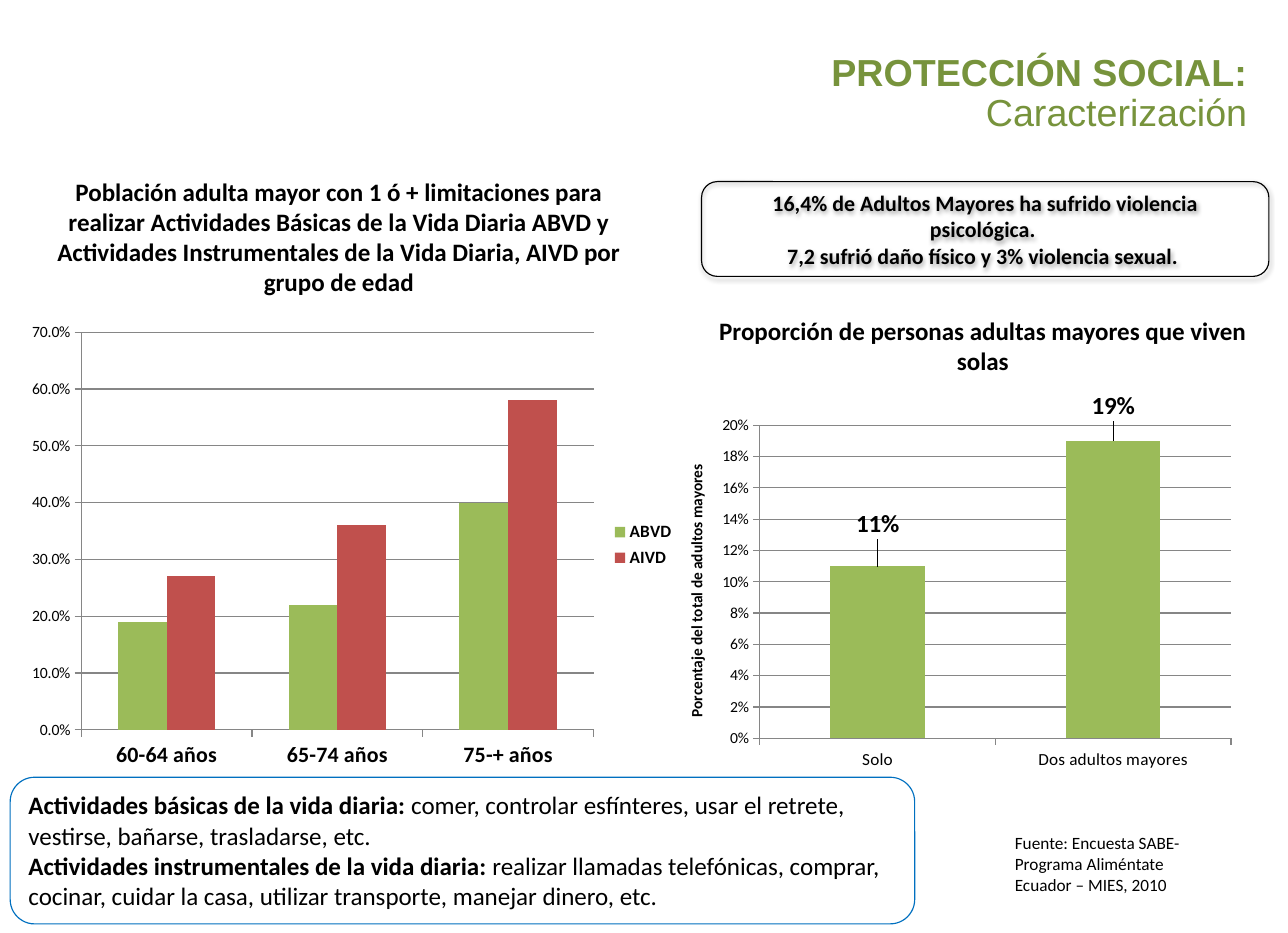
import pptx
import pptx.chart.data
import pptx.dml.color
import pptx.enum.chart
import pptx.enum.shapes
import pptx.enum.text
import pptx.oxml
import pptx.oxml.ns
import pptx.util

WIDE, HIGH = 11.42, 8.27
COLORS = {"ink": "000000", "title": "77933C", "green": "9BBB59",
          "red": "C0504D", "blue": "0070C0", "grid": "868686"}
NS = pptx.oxml.ns.nsdecls("a", "c")

# Places are percent of the slide: left, top, width, height
TITLE = ((26.27, 3.63, 72.24, 12.94),
         [[("PROTECCIÓN SOCIAL: \v", True), ("Caracterización ", False)]])
TEXTS = [
    ((3.06, 20.07, 46.5, 10.52),
     [[("Población adulta mayor con 1 ó + limitaciones para realizar "
        "Actividades Básicas de la Vida Diaria ABVD y Actividades "
        "Instrumentales de la Vida Diaria, AIVD por grupo de edad", True)]],
     dict(size=16, align="CENTER", anchor="MIDDLE")),
    ((77.93, 88.63, 16.37, 7.98),
     [[("Fuente: Encuesta SABE-Programa Aliméntate Ecuador – MIES, 2010",
        False)]],
     dict(size=11)),
    ((53.06, 33.62, 46.5, 6.89),
     [[("Proporción de personas adultas mayores que viven solas", True)]],
     dict(size=16, align="CENTER", anchor="MIDDLE")),
]
VIOLENCE = ((54.47, 19.47, 44.05, 10.16),
            [[("16,4% de Adultos Mayores ha sufrido violencia psicológica. ",
               True)],
             [("7,2 sufrió daño físico y 3% violencia sexual. ", True)]])
TERMS = ((0.79, 83.31, 70.23, 15.72),
         [[("Actividades básicas de la vida diaria: ", True),
           ("comer, controlar esfínteres, usar el retrete, vestirse, "
            "bañarse, trasladarse, etc.", False)],
          [("Actividades instrumentales de la vida diaria: ", True),
           ("realizar llamadas telefónicas, comprar, cocinar, cuidar la "
            "casa, utilizar transporte, manejar dinero, etc.", False)]])
LIMITS = dict(
    place=(1.66, 33.62, 51.66, 49.58), plot=(0.09, 0.04, 0.77, 0.86),
    cats=["60-64 años", "65-74 años", "75-+ años"],
    series=[("ABVD", [0.19, 0.22, 0.4], "green"),
            ("AIVD", [0.27, 0.36, 0.58], "red")],
    top=0.7, step=0.1, form="0.0%", size=14, bold=True)
ALONE = dict(
    place=(51.31, 41.96, 45.18, 41.23), plot=(0.17, 0.07, 0.81, 0.83),
    cats=["Solo", "Dos adultos mayores"],
    series=[("Series 1", [0.11, 0.19], "green")],
    top=0.2, step=0.02, form="0%", size=11, bold=False)
AXIS_NAME = "Porcentaje del total de adultos mayores"
LABEL_SHIFTS = [-0.06, -0.04]  # shares of the chart's height


def rgb(name):
    return pptx.dml.color.RGBColor.from_string(COLORS[name])


def area(place):
    """Turn percent of the slide into lengths."""
    return [pptx.util.Inches(part * side / 100)
            for part, side in zip(place, (WIDE, HIGH) * 2)]


def style(font, size, bold=False, color="ink", face="Calibri"):
    font.size, font.bold, font.name = pptx.util.Pt(size), bold, face
    font.color.rgb = rgb(color)


def write(shape, paras, size=16, align="LEFT", anchor="TOP", color="ink",
          face="Calibri", space=None):
    frame = shape.text_frame
    frame.word_wrap = True
    frame.vertical_anchor = getattr(pptx.enum.text.MSO_ANCHOR, anchor)
    for i, runs in enumerate(paras):
        para = frame.paragraphs[0] if i == 0 else frame.add_paragraph()
        para.alignment = getattr(pptx.enum.text.PP_ALIGN, align)
        if space:
            para.line_spacing = space
        for text, bold in runs:
            head, *rest = text.split("\v")
            run = para.add_run()
            run.text = head
            style(run.font, size, bold, color, face)
            if rest:
                para.add_line_break()


def frame_box(slide, place, line):
    box = slide.shapes.add_shape(
        pptx.enum.shapes.MSO_SHAPE.ROUNDED_RECTANGLE, *area(place))
    box.shadow.inherit = False
    box.fill.background()
    box.line.color.rgb = rgb(line)
    box.line.width = pptx.util.Pt(0.75)
    return box


def cast(box):
    """Give a box a soft shadow straight below it."""
    effects = box._element.spPr.find(pptx.oxml.ns.qn("a:effectLst"))
    blur, dist = pptx.util.Pt(3.1), pptx.util.Pt(1.8)
    effects.append(pptx.oxml.parse_xml(
        f'<a:outerShdw {NS} blurRad="{blur}" dist="{dist}" dir="5400000" '
        f'rotWithShape="0"><a:srgbClr val="{COLORS["ink"]}">'
        '<a:alpha val="35000"/></a:srgbClr></a:outerShdw>'))


def layout(inner):
    return pptx.oxml.parse_xml(
        f"<c:layout {NS}><c:manualLayout>{inner}</c:manualLayout></c:layout>")


def columns(slide, place, plot, cats, series, top, step, form, size, bold):
    data = pptx.chart.data.CategoryChartData(number_format=form)
    data.categories = cats
    for name, vals, _ in series:
        data.add_series(name, vals)
    chart = slide.shapes.add_chart(
        pptx.enum.chart.XL_CHART_TYPE.COLUMN_CLUSTERED, *area(place),
        data).chart
    style(chart.font, 10)
    chart.has_title = chart.has_legend = False
    bars = chart.plots[0]
    bars.gap_width, bars.overlap, bars.vary_by_categories = 150, 0, False
    for ser, (_, _, color) in zip(bars.series, series):
        ser.format.fill.solid()
        ser.format.fill.fore_color.rgb = rgb(color)
    axis = chart.value_axis
    axis.minimum_scale, axis.maximum_scale, axis.major_unit = 0, top, step
    axis.tick_labels.number_format = form
    axis.tick_labels.number_format_is_linked = False
    style(axis.tick_labels.font, 10)
    style(chart.category_axis.tick_labels.font, size, bold)
    axis.has_major_gridlines = True
    for part in (axis, axis.major_gridlines, chart.category_axis):
        part.format.line.color.rgb = rgb("grid")
        part.format.line.width = pptx.util.Pt(0.75)
    for part in (axis, chart.category_axis):
        part.major_tick_mark = pptx.enum.chart.XL_TICK_MARK.OUTSIDE
    zone = chart._chartSpace.chart.plotArea
    for old in zone.findall(pptx.oxml.ns.qn("c:layout")):
        zone.remove(old)
    zone.insert(0, layout(
        '<c:layoutTarget val="inner"/><c:xMode val="edge"/>'
        '<c:yMode val="edge"/>' + "".join(
            f'<c:{key} val="{val}"/>' for key, val in zip("xywh", plot))))
    return chart


def add_legend(chart):
    chart.has_legend = True
    chart.legend.position = pptx.enum.chart.XL_LEGEND_POSITION.RIGHT
    chart.legend.include_in_layout = False
    style(chart.legend.font, 11, True)


def add_labels(chart):
    """Show values over the columns, lifted by the given shifts."""
    ser = chart.plots[0].series[0]
    labels = ser.data_labels
    labels.show_value = True
    labels.number_format, labels.number_format_is_linked = "0%", False
    style(labels.font, 16, True)
    for i, shift in enumerate(LABEL_SHIFTS):
        label = ser.points[i].data_label
        style(label.font, 16, True)
        label.position = pptx.enum.chart.XL_LABEL_POSITION.OUTSIDE_END
        node = labels._element.findall(pptx.oxml.ns.qn("c:dLbl"))[i]
        node.insert(1, layout(f'<c:x val="0"/><c:y val="{shift}"/>'))


def main():
    deck = pptx.Presentation()
    deck.slide_width = pptx.util.Inches(WIDE)
    deck.slide_height = pptx.util.Inches(HIGH)
    slide = deck.slides.add_slide(deck.slide_layouts[5])
    title = slide.shapes.title
    place, paras = TITLE
    title.left, title.top, title.width, title.height = area(place)
    write(title, paras, size=24, align="RIGHT", anchor="MIDDLE",
          color="title", face="Arial", space=0.9)
    for place, paras, form in TEXTS:
        write(slide.shapes.add_textbox(*area(place)), paras, **form)
    add_legend(columns(slide, **LIMITS))
    alone = columns(slide, **ALONE)
    add_labels(alone)
    name = alone.value_axis.axis_title.text_frame
    name.text = AXIS_NAME
    style(name.paragraphs[0].runs[0].font, 10, True)
    box = frame_box(slide, VIOLENCE[0], "ink")
    cast(box)
    write(box, VIOLENCE[1], size=14, align="CENTER", anchor="MIDDLE")
    write(frame_box(slide, TERMS[0], "blue"), TERMS[1])
    deck.save("out.pptx")


if __name__ == "__main__":
    main()
